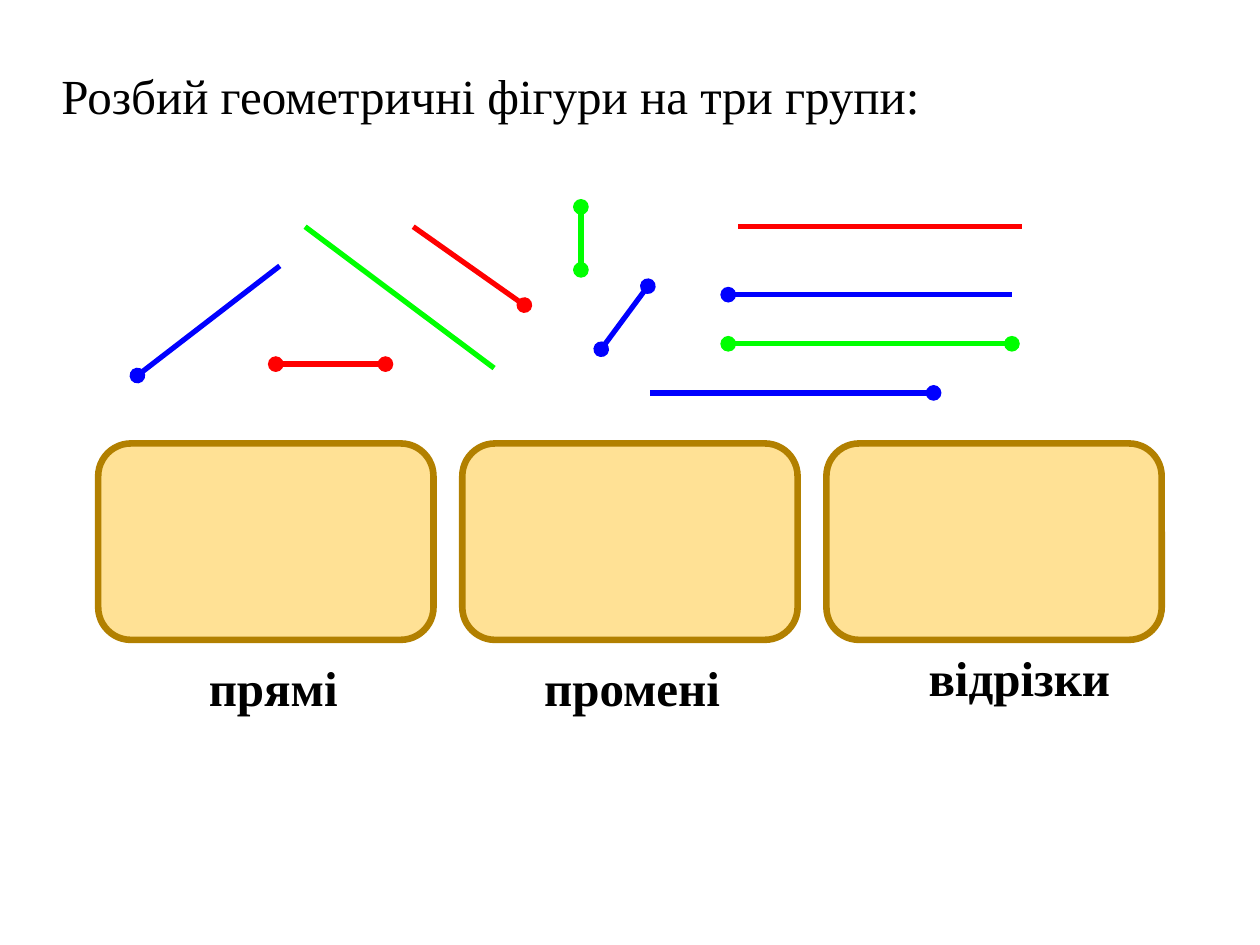
from lxml.etree import SubElement
from pptx import Presentation
from pptx.dml.color import RGBColor
from pptx.enum.shapes import MSO_CONNECTOR, MSO_SHAPE
from pptx.enum.text import MSO_AUTO_SIZE
from pptx.oxml.ns import qn
from pptx.util import Cm, Pt

FONT = "Times New Roman"
RED, GREEN, BLUE = "FF0000", "00FF00", "0000FF"
SAND, BROWN = "FFE193", "B28000"

# text, left, top, width, bold
TEXTS = [
    ("Розбий геометричні фігури на три групи:", 0.99, 1.19, 18.01, False),
    ("прямі", 3.96, 13.13, 3.15, True),
    ("промені", 10.72, 13.13, 4.09, True),
    ("відрізки", 18.47, 12.93, 4.22, True),
]

# start, end, colour, dot at start, dot at end
LINES = [
    ((2.77, 7.57), (5.64, 5.36), BLUE, True, False),
    ((5.56, 7.34), (7.77, 7.34), RED, True, True),
    ((6.15, 4.57), (9.96, 7.42), GREEN, False, False),
    ((8.33, 4.57), (10.57, 6.15), RED, False, True),
    ((12.12, 7.04), (13.06, 5.77), BLUE, True, True),
    ((11.71, 4.17), (11.71, 5.44), GREEN, True, True),
    ((14.88, 4.57), (20.6, 4.57), RED, False, False),
    ((14.68, 5.94), (20.4, 5.94), BLUE, True, False),
    ((14.68, 6.93), (20.4, 6.93), GREEN, True, True),
    ((13.11, 7.92), (18.82, 7.92), BLUE, False, True),
]

# row of group boxes
COUNT, LEFT, TOP, STEP, WIDTH, HEIGHT = 3, 1.98, 8.94, 7.34, 6.76, 3.96


def color(code):
    return RGBColor.from_string(code)


def add_box(slide, left):
    box = slide.shapes.add_shape(
        MSO_SHAPE.ROUNDED_RECTANGLE, Cm(left), Cm(TOP), Cm(WIDTH), Cm(HEIGHT))
    box.shadow.inherit = False
    box.fill.solid()
    box.fill.fore_color.rgb = color(SAND)
    tint = box.fill._xPr.find(qn("a:solidFill"))[0]
    SubElement(tint, qn("a:alpha"), val="98000")
    box.line.color.rgb = color(BROWN)
    box.line.width = Pt(3.78)


def add_line(slide, start, end, code, head, tail):
    ends = [Cm(v) for v in start + end]
    line = slide.shapes.add_connector(MSO_CONNECTOR.STRAIGHT, *ends)
    line.line.color.rgb = color(code)
    line.line.width = Pt(3)
    props = line._element.spPr
    for tag, dot in (("a:headEnd", head), ("a:tailEnd", tail)):
        if dot:
            SubElement(props.find(qn("a:ln")), qn(tag), type="oval")
    SubElement(props, qn("a:effectLst"))


def add_text(slide, text, left, top, width, bold):
    box = slide.shapes.add_textbox(Cm(left), Cm(top), Cm(width), Cm(1.45))
    frame = box.text_frame
    frame.word_wrap = False
    frame.auto_size = MSO_AUTO_SIZE.SHAPE_TO_FIT_TEXT
    run = frame.paragraphs[0].add_run()
    run.text = text
    run.font.name = FONT
    run.font.size = Pt(28)
    run.font.bold = bold
    run.font.color.rgb = color("000000")


def main():
    deck = Presentation()
    deck.slide_width, deck.slide_height = Cm(25.4), Cm(19.05)
    slide = deck.slides.add_slide(deck.slide_layouts[6])
    for i in range(COUNT):
        add_box(slide, LEFT + i * STEP)
    for line in LINES:
        add_line(slide, *line)
    for text in TEXTS:
        add_text(slide, *text)
    deck.save("out.pptx")


if __name__ == "__main__":
    main()
